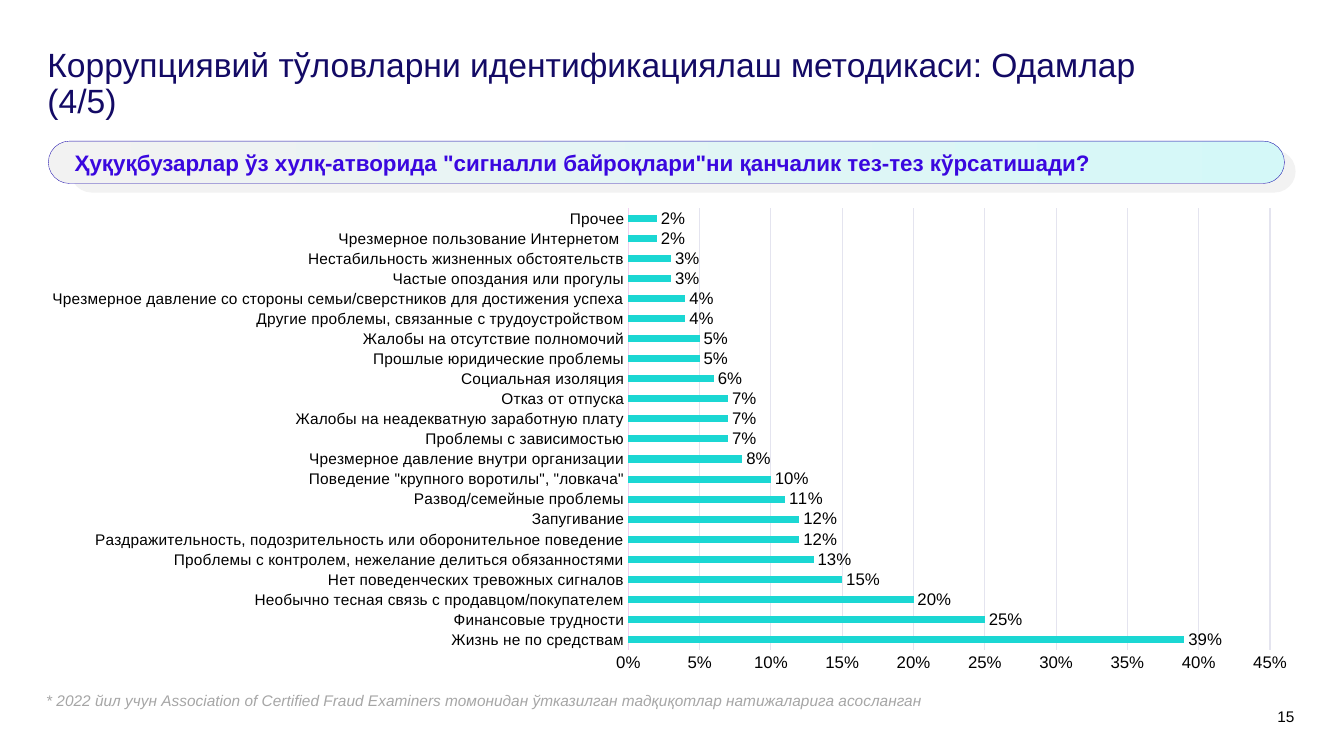
from dataclasses import dataclass

from lxml import etree
from pptx import Presentation
from pptx.chart.data import CategoryChartData
from pptx.dml.color import RGBColor
from pptx.enum.chart import XL_CHART_TYPE as ChartType
from pptx.enum.chart import XL_LABEL_POSITION as LabelPosition
from pptx.enum.chart import XL_TICK_MARK as TickMark
from pptx.enum.shapes import MSO_SHAPE as Shape
from pptx.enum.text import MSO_ANCHOR as Anchor
from pptx.enum.text import PP_ALIGN as Align
from pptx.oxml.ns import qn
from pptx.util import Inches, Pt


@dataclass(frozen=True)
class Theme:
    font: str = "Arial"
    title: str = "130A65"
    question: str = "3A07DF"
    outline: str = "2112AE"
    pale: str = "F2F2F2"
    aqua: str = "D4F8F8"
    bar: str = "1BD7D3"
    axis: str = "F0D1F1"
    grid: str = "E4E4EF"
    ink: str = "000000"
    note: str = "A6A6A6"
    title_size: int = 24
    question_size: int = 16
    value_size: int = 12
    small_size: int = 11


THEME = Theme()

BEHAVIOURS = [
    ("Жизнь не по средствам", 0.39),
    ("Финансовые трудности", 0.25),
    ("Необычно тесная связь с продавцом/покупателем", 0.20),
    ("Нет поведенческих тревожных сигналов", 0.15),
    ("Проблемы с контролем, нежелание делиться обязанностями", 0.13),
    ("Раздражительность, подозрительность или оборонительное поведение", 0.12),
    ("Запугивание", 0.12),
    ("Развод/семейные проблемы", 0.11),
    ('Поведение "крупного воротилы", "ловкача"', 0.10),
    ("Чрезмерное давление внутри организации", 0.08),
    ("Проблемы с зависимостью", 0.07),
    ("Жалобы на неадекватную заработную плату", 0.07),
    ("Отказ от отпуска", 0.07),
    ("Социальная изоляция", 0.06),
    ("Прошлые юридические проблемы", 0.05),
    ("Жалобы на отсутствие полномочий", 0.05),
    ("Другие проблемы, связанные с трудоустройством", 0.04),
    ("Чрезмерное давление со стороны семьи/сверстников для достижения успеха", 0.04),
    ("Частые опоздания или прогулы", 0.03),
    ("Нестабильность жизненных обстоятельств", 0.03),
    ("Чрезмерное пользование Интернетом ", 0.02),
    ("Прочее", 0.02),
]


def rgb(value):
    return RGBColor.from_string(value)


def style_font(font, size, color, bold=False, italic=False):
    font.name = THEME.font
    font.size = Pt(size)
    font.color.rgb = rgb(color)
    font.bold = bold
    font.italic = italic


def add_text(slide, box, text, size, color, align=Align.LEFT, margins=(0, 0),
             spacing=1.0, italic=False):
    """Place one paragraph; margins are (horizontal, vertical) in inches."""
    label = slide.shapes.add_textbox(*map(Inches, box))
    frame = label.text_frame
    frame.word_wrap = True
    frame.margin_left = frame.margin_right = Inches(margins[0])
    frame.margin_top = frame.margin_bottom = Inches(margins[1])
    frame.text = text
    paragraph = frame.paragraphs[0]
    paragraph.alignment = align
    paragraph.line_spacing = spacing
    style_font(paragraph.runs[0].font, size, color, italic=italic)


def add_pill(slide, box):
    pill = slide.shapes.add_shape(Shape.ROUNDED_RECTANGLE, *map(Inches, box))
    pill.adjustments[0] = 0.5
    pill.shadow.inherit = False
    return pill


def add_question_banner(slide, box, question):
    left, top, width, height = box

    # Offset backing
    backing = add_pill(slide, (left + 0.22, top + 0.09, width - 0.11, height))
    backing.fill.solid()
    backing.fill.fore_color.rgb = rgb(THEME.pale)
    backing.line.fill.background()

    # Gradient front with the question
    banner = add_pill(slide, box)
    banner.fill.gradient()
    banner.fill.gradient_angle = 0
    for stop, color in zip(banner.fill.gradient_stops, (THEME.pale, THEME.aqua)):
        stop.color.rgb = rgb(color)
    banner.line.color.rgb = rgb(THEME.outline)
    banner.line.width = Pt(0.25)
    frame = banner.text_frame
    frame.word_wrap = True
    frame.vertical_anchor = Anchor.MIDDLE
    frame.margin_left = Inches(0.2)
    frame.text = question
    frame.paragraphs[0].alignment = Align.LEFT
    style_font(frame.paragraphs[0].runs[0].font, THEME.question_size,
               THEME.question, bold=True)


def set_plot_layout(chart, x, y, w, h):
    """Fix the inner plot area as fractions of the chart."""
    plot_area = chart.plots[0]._element.getparent()
    layout = plot_area.find(qn("c:layout"))
    if layout is None:
        layout = etree.Element(qn("c:layout"))
        plot_area.insert(0, layout)
    manual = etree.SubElement(layout, qn("c:manualLayout"))
    settings = [("layoutTarget", "inner"), ("xMode", "edge"), ("yMode", "edge"),
                ("x", x), ("y", y), ("w", w), ("h", h)]
    for tag, value in settings:
        etree.SubElement(manual, qn(f"c:{tag}")).set("val", str(value))


def add_behaviour_chart(slide, box):
    data = CategoryChartData(number_format="0%")
    names, shares = zip(*BEHAVIOURS)
    data.categories = names
    data.add_series("Series 1", shares)
    chart = slide.shapes.add_chart(
        ChartType.BAR_CLUSTERED, *map(Inches, box), data).chart
    chart.has_legend = False
    chart.has_title = False
    style_font(chart.font, THEME.small_size, THEME.ink)
    set_plot_layout(chart, 0.483, 0.032, 0.498, 0.89)

    # Bars and their labels
    plot = chart.plots[0]
    plot.gap_width = 182
    plot.vary_by_categories = False
    bars = plot.series[0]
    bars.format.fill.solid()
    bars.format.fill.fore_color.rgb = rgb(THEME.bar)
    labels = bars.data_labels
    labels.show_value = True
    labels.position = LabelPosition.OUTSIDE_END
    labels.number_format = "0%"
    labels.number_format_is_linked = False
    style_font(labels.font, THEME.value_size, THEME.ink)

    # Axes
    behaviours, share = chart.category_axis, chart.value_axis
    for axis, size in ((behaviours, THEME.small_size), (share, THEME.value_size)):
        axis.major_tick_mark = axis.minor_tick_mark = TickMark.NONE
        style_font(axis.tick_labels.font, size, THEME.ink)
    behaviours.format.line.color.rgb = rgb(THEME.axis)
    behaviours.format.line.width = Pt(0.75)
    share.minimum_scale, share.maximum_scale, share.major_unit = 0, 0.45, 0.05
    share.format.line.fill.background()
    share.major_gridlines.format.line.color.rgb = rgb(THEME.grid)
    share.major_gridlines.format.line.width = Pt(0.75)
    share.tick_labels.number_format = "0%"
    share.tick_labels.number_format_is_linked = False


def main():
    deck = Presentation()
    deck.slide_width, deck.slide_height = Inches(13.33), Inches(7.5)
    slide = deck.slides.add_slide(deck.slide_layouts[6])

    # Heading
    add_text(slide, (0.47, 0.48, 11.38, 0.48),
             "Коррупциявий тўловларни идентификациялаш методикаси: Одамлар (4/5)",
             THEME.title_size, THEME.title, spacing=0.9)
    add_question_banner(
        slide, (0.48, 1.4, 12.26, 0.42),
        'Ҳуқуқбузарлар ўз хулқ-атворида "сигналли байроқлари"ни '
        'қанчалик тез-тез кўрсатишади?')

    # Survey results
    add_behaviour_chart(slide, (0.06, 1.91, 12.78, 4.92))

    # Footer
    add_text(slide, (0.36, 6.83, 9.15, 0.27),
             "* 2022 йил учун Association of Certified Fraud Examiners томонидан "
             "ўтказилган тадқиқотлар натижаларига асосланган",
             THEME.small_size, THEME.note, Align.JUSTIFY, (0.1, 0.05), 0.9, True)
    add_text(slide, (12.41, 7.02, 0.43, 0.16), "15",
             THEME.small_size, THEME.ink, Align.RIGHT)

    deck.save("out.pptx")


if __name__ == "__main__":
    main()
